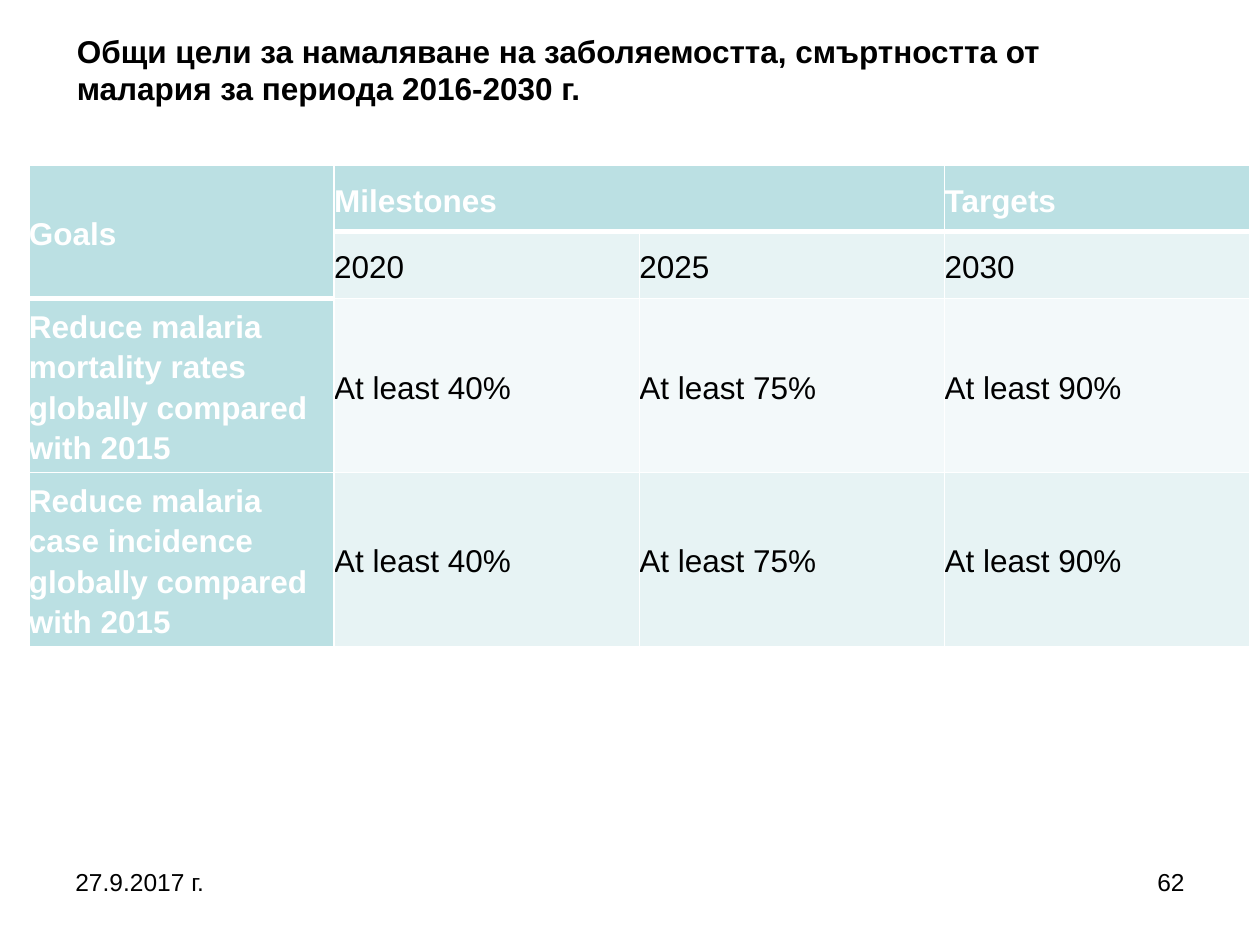
import pptx
import pptx.util
import pptx.dml.color
import pptx.enum.text
import pptx.oxml
import pptx.oxml.ns

Inches = pptx.util.Inches
Pt = pptx.util.Pt
RGBColor = pptx.dml.color.RGBColor
Align = pptx.enum.text.PP_ALIGN
Anchor = pptx.enum.text.MSO_ANCHOR

BLACK = RGBColor(0x00, 0x00, 0x00)
WHITE = RGBColor(0xFF, 0xFF, 0xFF)
TEAL = RGBColor(0xBB, 0xE0, 0xE3)
BAND = RGBColor(0xE7, 0xF3, 0xF4)
PALE_BAND = RGBColor(0xF3, 0xF9, 0xFA)

TITLE = "Общи цели за намаляване на заболяемостта, смъртността от малария за периода 2016-2030 г."
GOALS = [
    ["Goals", "Milestones", "", "Targets"],
    ["", "2020", "2025", "2030"],
    ["Reduce malaria mortality rates globally compared with 2015",
     "At least 40%", "At least 75%", "At least 90%"],
    ["Reduce malaria case incidence globally compared with 2015",
     "At least 40%", "At least 75%", "At least 90%"],
]
ROW_HEIGHTS = [0.53, 0.53, 1.11, 1.11]
BAND_FILLS = [TEAL, BAND, PALE_BAND, BAND]


def add_span(para, text, size, color, bold=False):
    span = para.add_run()
    span.text = text
    span.font.name = "Arial"
    span.font.size = Pt(size)
    span.font.bold = bold
    span.font.color.rgb = color


def place(shape, left, top, width, height):
    shape.left, shape.top = Inches(left), Inches(top)
    shape.width, shape.height = Inches(width), Inches(height)


def add_title(page):
    title = page.shapes.title
    place(title, 0.51, 0.2, 8.98, 0.71)
    frame = title.text_frame
    frame.word_wrap = True
    frame.auto_size = pptx.enum.text.MSO_AUTO_SIZE.NONE
    frame.vertical_anchor = Anchor.TOP
    para = frame.paragraphs[0]
    para.alignment = Align.LEFT
    add_span(para, TITLE, 18, BLACK, True)


def add_footer(page, left, text, alignment):
    box = page.shapes.add_textbox(Inches(left), Inches(6.83), Inches(2.33), Inches(0.52))
    box.text_frame.word_wrap = True
    para = box.text_frame.paragraphs[0]
    para.alignment = alignment
    add_span(para, text, 14, BLACK)


def set_borders(cell, top, bottom):
    properties = cell._tc.get_or_add_tcPr()
    widths = {"lnL": 1, "lnR": 1, "lnT": top, "lnB": bottom}
    for index, (side, width) in enumerate(widths.items()):
        line = pptx.oxml.parse_xml(
            f'<a:{side} {pptx.oxml.ns.nsdecls("a")} w="{Pt(width)}">'
            f'<a:solidFill><a:srgbClr val="{WHITE}"/></a:solidFill></a:{side}>')
        properties.insert(index, line)


def format_cell(cell, text, fill, heading):
    cell.fill.solid()
    cell.fill.fore_color.rgb = fill
    cell.vertical_anchor = Anchor.MIDDLE
    cell.margin_left = cell.margin_right = cell.margin_top = cell.margin_bottom = 0
    if text:
        para = cell.text_frame.paragraphs[0]
        para.line_spacing = 1.15
        para.space_after = Pt(15)
        add_span(para, text, 18, WHITE if heading else BLACK, heading)


def add_goals_table(page):
    frame = page.shapes.add_table(4, 4, Inches(0.23), Inches(1.31), Inches(9.69), Inches(3.83))
    table = frame.table
    for row, height in zip(table.rows, ROW_HEIGHTS):
        row.height = Inches(height)
    table.cell(0, 0).merge(table.cell(1, 0))
    table.cell(0, 1).merge(table.cell(0, 2))
    for row, texts in enumerate(GOALS):
        for column, text in enumerate(texts):
            cell = table.cell(row, column)
            heading = row == 0 or column == 0
            format_cell(cell, text, TEAL if heading else BAND_FILLS[row], heading)
            header_end = 1 if column == 0 else 0
            top = 3 if row == header_end + 1 else 1
            bottom = 3 if row in (0, header_end) else 1
            set_borders(cell, top, bottom)
    frame.height = Inches(3.83)


def main():
    deck = pptx.Presentation()
    deck.slide_width, deck.slide_height = Inches(10), Inches(7.5)
    page = deck.slides.add_slide(deck.slide_layouts[5])
    add_footer(page, 0.5, "27.9.2017 г.", Align.LEFT)
    add_footer(page, 7.17, "62", Align.RIGHT)
    add_goals_table(page)
    add_title(page)
    deck.save("out.pptx")


if __name__ == "__main__":
    main()
